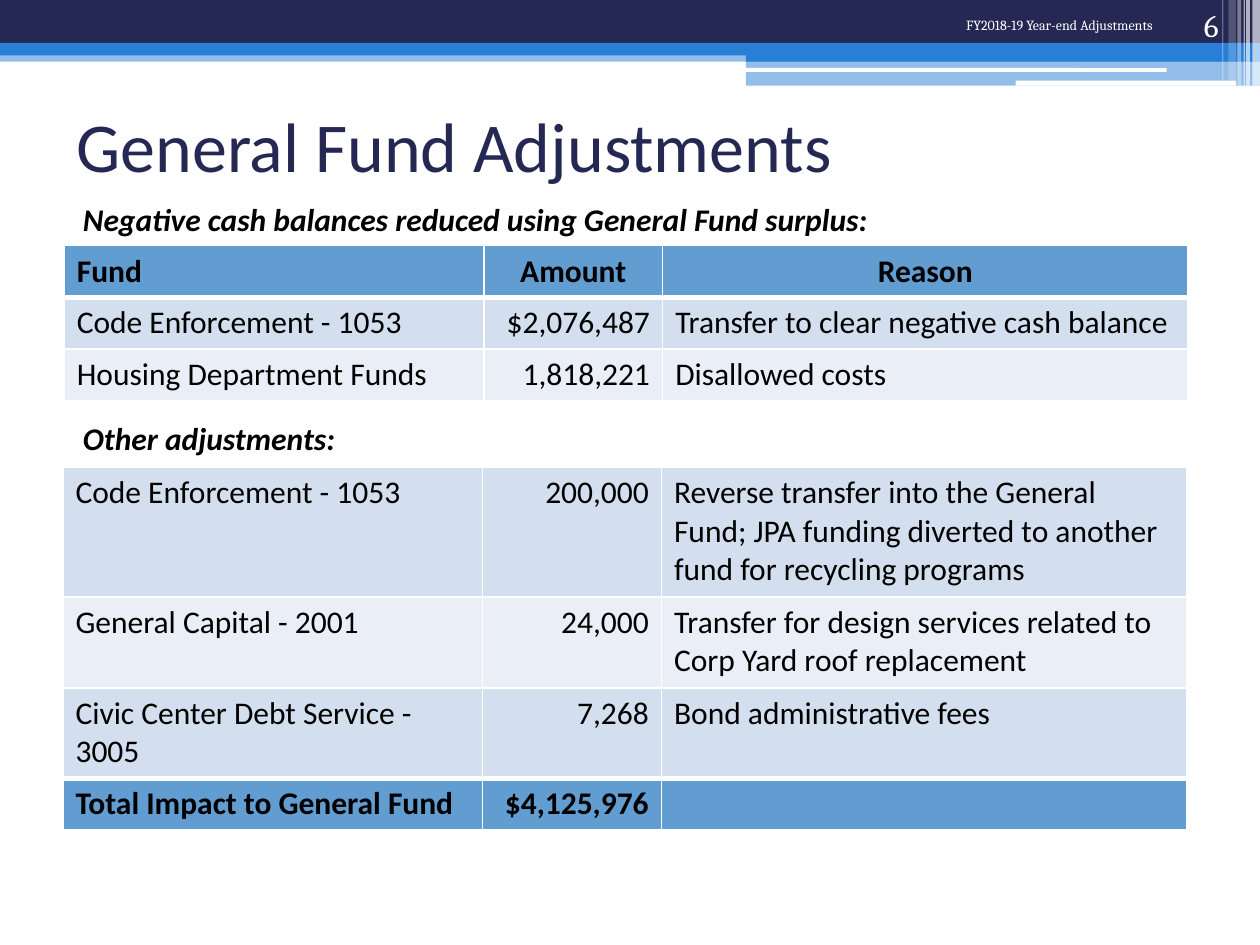
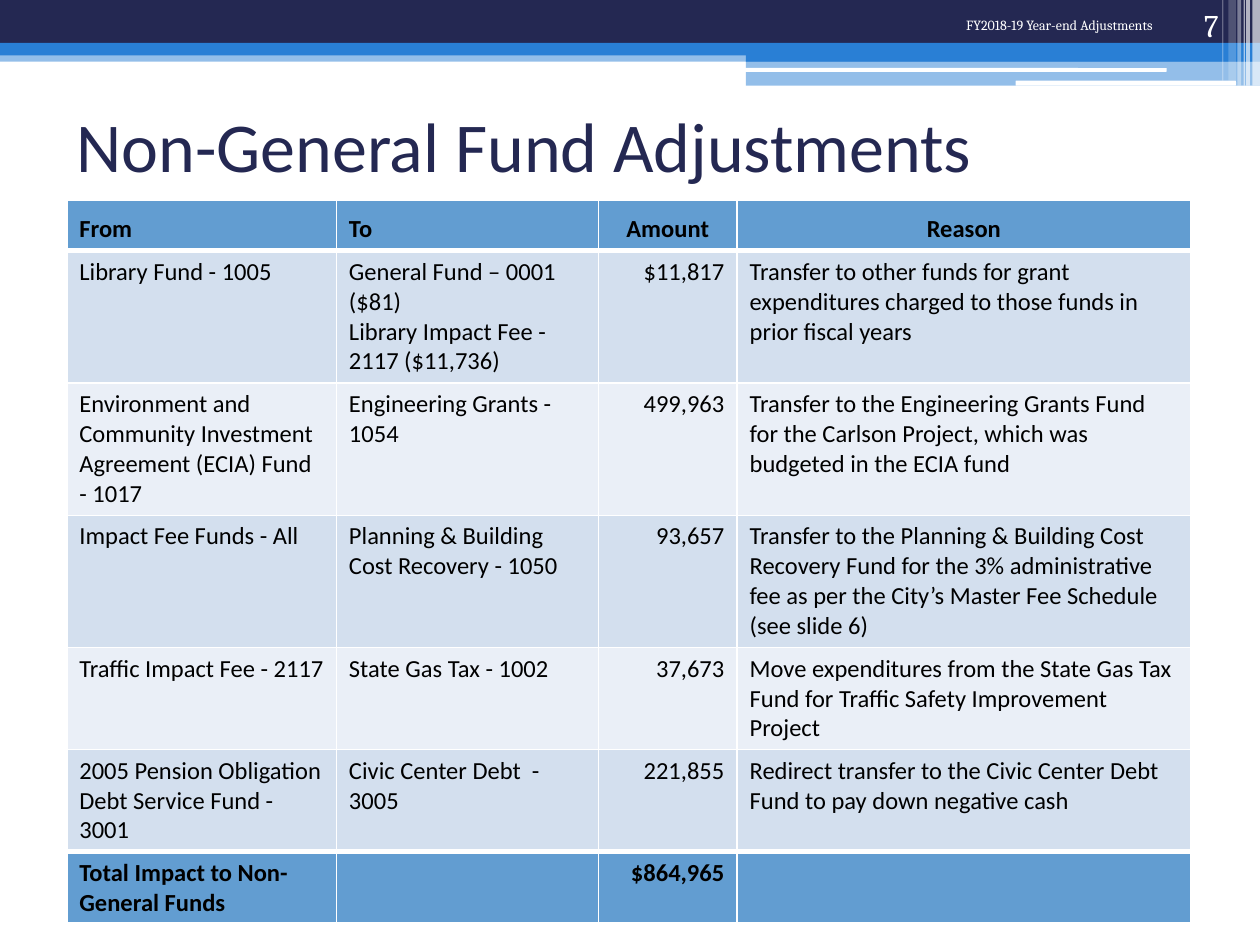
import dataclasses

import lxml.etree
import pptx
import pptx.dml.color
import pptx.enum.shapes
import pptx.enum.text
import pptx.oxml.ns
import pptx.util

PX = 9144  # EMU in one px, 100 px to the inch
RGB = pptx.dml.color.RGBColor.from_string
ALIGN = pptx.enum.text.PP_ALIGN
ANCHOR = pptx.enum.text.MSO_ANCHOR
SHAPE = pptx.enum.shapes.MSO_SHAPE
qn = pptx.oxml.ns.qn


@dataclasses.dataclass(frozen=True)
class Theme:
    navy: str = "242852"
    blue: str = "297FD5"
    white: str = "FFFFFF"
    black: str = "000000"
    accent: str = "629DD1"
    stripes: tuple = ("D3DFEE", "EAEFF7")
    title: int = 40
    body: int = 18
    small: int = 14
    footer: int = 8
    sans: str = "Calibri"
    serif: str = "Cambria"


theme = Theme()

# Text styles: font values, colour, alignment and anchor
title_style = dict(font=dict(name=theme.sans, size=theme.title), color=theme.navy,
                   align=ALIGN.LEFT, anchor=ANCHOR.MIDDLE)
footer_style = dict(font=dict(name=theme.serif, size=theme.footer), color=theme.white,
                    align=ALIGN.RIGHT, anchor=ANCHOR.TOP)
number_style = dict(font=dict(name=theme.serif, size=theme.body), color=theme.white,
                    align=ALIGN.RIGHT, anchor=ANCHOR.BOTTOM)
label_style = dict(font=dict(name=theme.sans, size=theme.body, bold=True, italic=True),
                   color=theme.black, align=ALIGN.LEFT, anchor=ANCHOR.TOP)

# Banner parts: left, top, width, height, colour, opacity in percent, shape
banner = [
    (0, 40, 1000, 9, theme.blue, 50, SHAPE.RECTANGLE),
    (0, 0, 1000, 34, theme.navy, 100, SHAPE.RECTANGLE),
    (0, 34, 1000, 10, theme.blue, 100, SHAPE.RECTANGLE),
    (592, 39, 408, 10, theme.blue, 100, SHAPE.RECTANGLE),
    (592, 48, 408, 20, theme.blue, 50, SHAPE.RECTANGLE),
    (591, 54, 335, 3, theme.white, 100, SHAPE.ROUNDED_RECTANGLE),
    (806, 64, 175, 4, theme.white, 100, SHAPE.ROUNDED_RECTANGLE),
]
for left, width, height, opacity in [(994, 6, 68, 65), (989, 3, 68, 65), (987, 1, 68, 60),
                                     (982, 3, 68, 40), (975, 6, 64, 20), (970, 1, 64, 30)]:
    banner.append((left, 0, width, height, theme.white, opacity, SHAPE.RECTANGLE))

# Slide content; a table row is its height, its kind and its cell texts
fund_columns = [333, 142, 417]
slides = [
    dict(
        number="6",
        title="General Fund Adjustments",
        labels=[(154, "Negative cash balances reduced using General Fund surplus:"),
                (328, "Other adjustments:")],
        tables=[
            dict(left=51, top=195, columns=fund_columns, size=theme.body,
                 header_anchor=ANCHOR.TOP, rows=[
                     (41, "header", ["Fund", "Amount", "Reason"]),
                     (41, "entry", ["Code Enforcement - 1053", "$2,076,487",
                                    "Transfer to clear negative cash balance"]),
                     (41, "entry", ["Housing Department Funds", "1,818,221",
                                    "Disallowed costs"]),
                 ]),
            dict(left=50, top=371, columns=fund_columns, size=theme.body, rows=[
                (103, "entry", ["Code Enforcement - 1053", "200,000",
                                "Reverse transfer into the General Fund; JPA funding "
                                "diverted to another fund for recycling programs"]),
                (72, "entry", ["General Capital - 2001", "24,000",
                               "Transfer for design services related to Corp Yard "
                               "roof replacement"]),
                (72, "entry", ["Civic Center Debt Service - 3005", "7,268",
                               "Bond administrative fees"]),
                (41, "total", ["Total Impact to General Fund", "$4,125,976", ""]),
            ]),
        ],
    ),
    dict(
        number="7",
        title="Non-General Fund Adjustments",
        labels=[],
        tables=[
            dict(left=53, top=159, columns=[214, 208, 110, 360], size=theme.small,
                 header_anchor=ANCHOR.BOTTOM, rows=[
                     (40, "header", ["From", "To", "Amount", "Reason"]),
                     (105, "entry", ["Library Fund - 1005",
                                     "General Fund – 0001 ($81)\n"
                                     "Library Impact Fee - 2117 ($11,736)",
                                     "$11,817",
                                     "Transfer to other funds for grant expenditures "
                                     "charged to those funds in prior fiscal years"]),
                     (105, "entry", ["Environment and Community Investment Agreement "
                                     "(ECIA) Fund - 1017",
                                     "Engineering Grants - 1054", "499,963",
                                     "Transfer to the Engineering Grants Fund for the "
                                     "Carlson Project, which was budgeted in the ECIA fund"]),
                     (105, "entry", ["Impact Fee Funds - All",
                                     "Planning & Building Cost Recovery - 1050", "93,657",
                                     "Transfer to the Planning & Building Cost Recovery "
                                     "Fund for the 3% administrative fee as per the City’s "
                                     "Master Fee Schedule (see slide 6)"]),
                     (81, "entry", ["Traffic Impact Fee - 2117", "State Gas Tax - 1002",
                                    "37,673",
                                    "Move expenditures from the State Gas Tax Fund for "
                                    "Traffic Safety Improvement Project"]),
                     (81, "entry", ["2005 Pension Obligation Debt Service Fund - 3001",
                                    "Civic Center Debt  - 3005", "221,855",
                                    "Redirect transfer to the Civic Center Debt Fund to "
                                    "pay down negative cash"]),
                     (56, "total", ["Total Impact to Non-General Funds", "",
                                    "$864,965", ""]),
                 ]),
        ],
    ),
]


def write(frame, text, style):
    """Fill a text frame, one paragraph a line."""
    frame.word_wrap = True
    for index, line in enumerate(text.split("\n")):
        para = frame.paragraphs[0] if index == 0 else frame.add_paragraph()
        para.alignment = style["align"]
        if not line:
            continue
        span = para.add_run()
        span.text = line
        for name, value in style["font"].items():
            setattr(span.font, name, pptx.util.Pt(value) if name == "size" else value)
        span.font.color.rgb = RGB(style["color"])


def add_grid(page, grid):
    """Add a table with striped entries and accented header and total rows."""
    rows, columns = grid["rows"], grid["columns"]
    table = page.shapes.add_table(
        len(rows), len(columns), grid["left"] * PX, grid["top"] * PX,
        sum(columns) * PX, sum(row[0] for row in rows) * PX).table
    table.first_row = table.horz_banding = False
    for column, width in zip(table.columns, columns):
        column.width = width * PX
    kinds = [kind for _, kind, _ in rows]
    amount_column = len(columns) - 2
    for r, (height, kind, texts) in enumerate(rows):
        table.rows[r].height = height * PX
        header = kind == "header"
        stripe = theme.stripes[(r - kinds.index("entry")) % 2]
        # A heavy rule parts the entries from the header and the total
        widths = dict(lnL=1, lnR=1,
                      lnT=3 if r > 0 and kinds[r - 1] != kind else 1,
                      lnB=3 if r + 1 < len(rows) and kinds[r + 1] != kind else 1)
        for c, text in enumerate(texts):
            cell = table.cell(r, c)
            align = ALIGN.LEFT
            if c == amount_column:
                align = ALIGN.CENTER if header else ALIGN.RIGHT
            elif header and c > amount_column:
                align = ALIGN.CENTER
            write(cell.text_frame, text, dict(
                font=dict(name=theme.sans, size=grid["size"], bold=kind != "entry"),
                color=theme.black, align=align))
            cell.vertical_anchor = grid["header_anchor"] if header else ANCHOR.TOP
            properties = cell._tc.get_or_add_tcPr()
            for side, width in widths.items():
                line = lxml.etree.SubElement(properties, qn("a:" + side),
                                             w=str(pptx.util.Pt(width)))
                solid = lxml.etree.SubElement(line, qn("a:solidFill"))
                lxml.etree.SubElement(solid, qn("a:srgbClr"), val=theme.white)
            cell.fill.solid()
            cell.fill.fore_color.rgb = RGB(stripe if kind == "entry" else theme.accent)


deck = pptx.Presentation()
deck.slide_width, deck.slide_height = 1000 * PX, 750 * PX

for content in slides:
    page = deck.slides.add_slide(deck.slide_layouts[6])

    # Banner
    for left, top, width, height, color, opacity, outline in banner:
        band = page.shapes.add_shape(outline, left * PX, top * PX, width * PX, height * PX)
        band.shadow.inherit = False
        band.line.fill.background()
        band.fill.solid()
        band.fill.fore_color.rgb = RGB(color)
        if opacity < 100:
            tint = band._element.spPr.find(".//" + qn("a:srgbClr"))
            lxml.etree.SubElement(tint, qn("a:alpha"), val=str(opacity * 1000))

    # Title, footer, slide number and table labels
    texts = [
        (51, 56, 900, 117, content["title"], title_style),
        (733, 8, 192, 50, "FY2018-19 Year-end Adjustments", footer_style),
        (894, 0, 83, 40, content["number"], number_style),
    ]
    texts += [(56, top, 783, 40, label, label_style) for top, label in content["labels"]]
    for left, top, width, height, text, style in texts:
        box = page.shapes.add_textbox(left * PX, top * PX, width * PX, height * PX)
        box.text_frame.vertical_anchor = style["anchor"]
        write(box.text_frame, text, style)

    # Tables
    for grid in content["tables"]:
        add_grid(page, grid)

deck.save("out.pptx")
